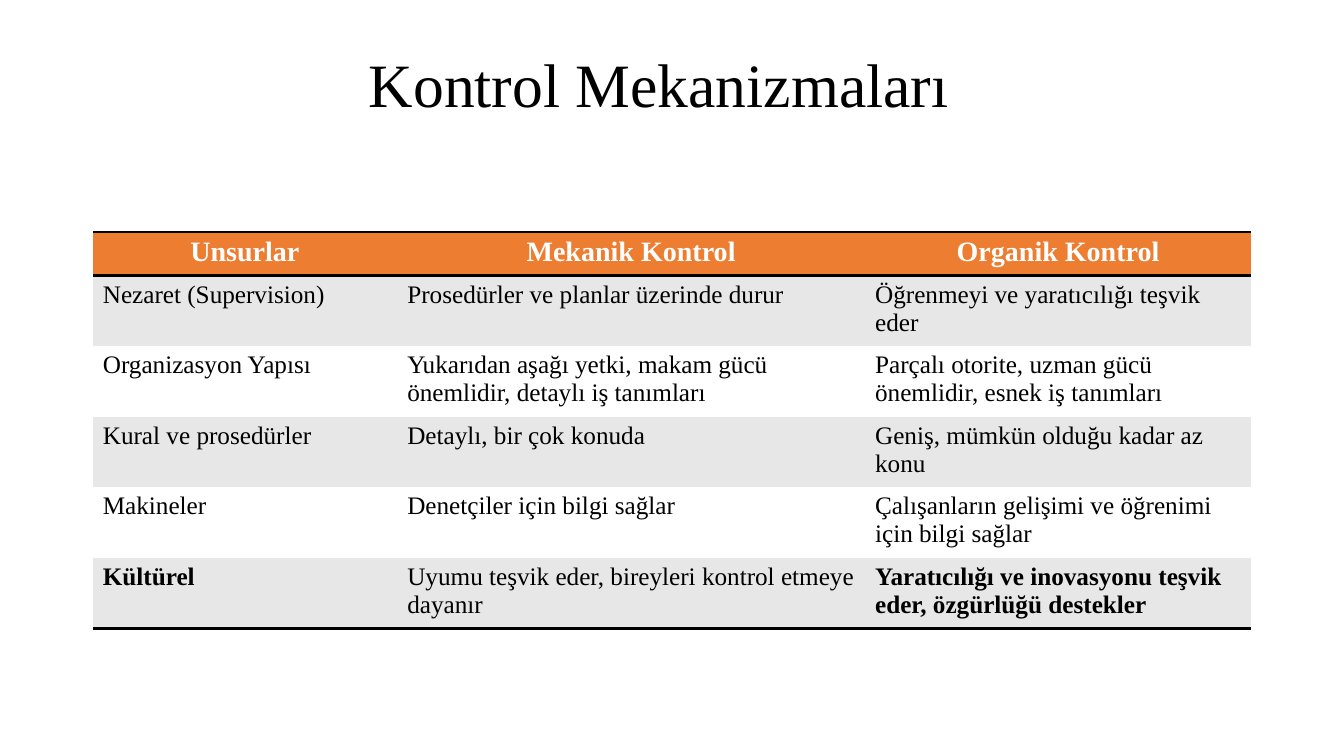
from dataclasses import dataclass

from lxml import etree
from pptx import Presentation
from pptx.dml.color import RGBColor
from pptx.enum import text
from pptx.oxml import ns
from pptx.util import Inches, Pt


@dataclass(frozen=True)
class Theme:
    font: str = "Times New Roman"
    black: str = "000000"
    white: str = "FFFFFF"
    orange: str = "ED7D31"
    grey: str = "E7E7E7"
    title_size: int = 44
    header_size: int = 20
    body_size: int = 18
    rule_width: int = 2


THEME = Theme()
COLUMN_WIDTHS = (3.02, 4.64, 3.83)
HEADER_HEIGHT = 0.41
BODY_HEIGHT = 0.65
ROWS = (
    ("Unsurlar", "Mekanik Kontrol", "Organik Kontrol"),
    ("Nezaret (Supervision)", "Prosedürler ve planlar üzerinde durur",
     "Öğrenmeyi ve yaratıcılığı teşvik eder"),
    ("Organizasyon Yapısı",
     "Yukarıdan aşağı yetki, makam gücü önemlidir, detaylı iş tanımları",
     "Parçalı otorite, uzman gücü önemlidir, esnek iş tanımları"),
    ("Kural ve prosedürler", "Detaylı, bir çok konuda",
     "Geniş, mümkün olduğu kadar az konu"),
    ("Makineler", "Denetçiler için bilgi sağlar",
     "Çalışanların gelişimi ve öğrenimi için bilgi sağlar"),
    ("Kültürel", "Uyumu teşvik eder, bireyleri kontrol etmeye dayanır",
     "Yaratıcılığı ve inovasyonu teşvik eder, özgürlüğü destekler"),
)
BOLD_BODY_CELLS = {(5, 0), (5, 2)}


def add_run(paragraph, wording, size, color, bold=False):
    run = paragraph.add_run()
    run.text = wording
    run.font.name = THEME.font
    run.font.size = Pt(size)
    run.font.bold = bold
    run.font.color.rgb = RGBColor.from_string(color)


def add_title(slide, wording):
    box = slide.shapes.add_textbox(Inches(3.56), Inches(0.32), Inches(6.2), Inches(1.09))
    frame = box.text_frame
    frame.word_wrap = True
    frame.vertical_anchor = text.MSO_ANCHOR.MIDDLE
    paragraph = frame.paragraphs[0]
    paragraph.line_spacing = 0.9
    add_run(paragraph, wording, THEME.title_size, THEME.black)


def set_borders(cell, ruled_sides):
    """Rule the given sides (from L, R, T, B) in black and clear the others."""
    properties = cell._tc.get_or_add_tcPr()
    for position, side in enumerate("LRTB"):
        line = etree.Element(ns.qn(f"a:ln{side}"))
        properties.insert(position, line)
        if side in ruled_sides:
            line.set("w", str(Pt(THEME.rule_width)))
            fill = etree.SubElement(line, ns.qn("a:solidFill"))
            etree.SubElement(fill, ns.qn("a:srgbClr"), val=THEME.black)
        else:
            etree.SubElement(line, ns.qn("a:noFill"))


def fill_cell(cell, wording, row, column):
    is_header = row == 0
    paragraph = cell.text_frame.paragraphs[0]
    cell.fill.solid()
    if is_header:
        background = THEME.orange
        paragraph.alignment = text.PP_ALIGN.CENTER
        add_run(paragraph, wording, THEME.header_size, THEME.white, bold=True)
    else:
        background = THEME.grey if row % 2 else THEME.white
        add_run(paragraph, wording, THEME.body_size, THEME.black,
                bold=(row, column) in BOLD_BODY_CELLS)
    cell.fill.fore_color.rgb = RGBColor.from_string(background)

    top = "T" if row <= 1 else ""
    bottom = "B" if row in (0, len(ROWS) - 1) else ""
    set_borders(cell, top + bottom)


def add_control_table(slide):
    heights = [HEADER_HEIGHT] + [BODY_HEIGHT] * (len(ROWS) - 1)
    table = slide.shapes.add_table(
        len(ROWS), len(COLUMN_WIDTHS), Inches(0.92), Inches(2.3),
        Inches(sum(COLUMN_WIDTHS)), Inches(sum(heights))).table
    for column, width in zip(table.columns, COLUMN_WIDTHS):
        column.width = Inches(width)
    for row, height in zip(table.rows, heights):
        row.height = Inches(height)
    for row, wordings in enumerate(ROWS):
        for column, wording in enumerate(wordings):
            fill_cell(table.cell(row, column), wording, row, column)


def main():
    presentation = Presentation()
    presentation.slide_width = Inches(13.33)
    presentation.slide_height = Inches(7.5)
    slide = presentation.slides.add_slide(presentation.slide_layouts[6])
    add_title(slide, "Kontrol Mekanizmaları")
    add_control_table(slide)
    presentation.save("out.pptx")


if __name__ == "__main__":
    main()
